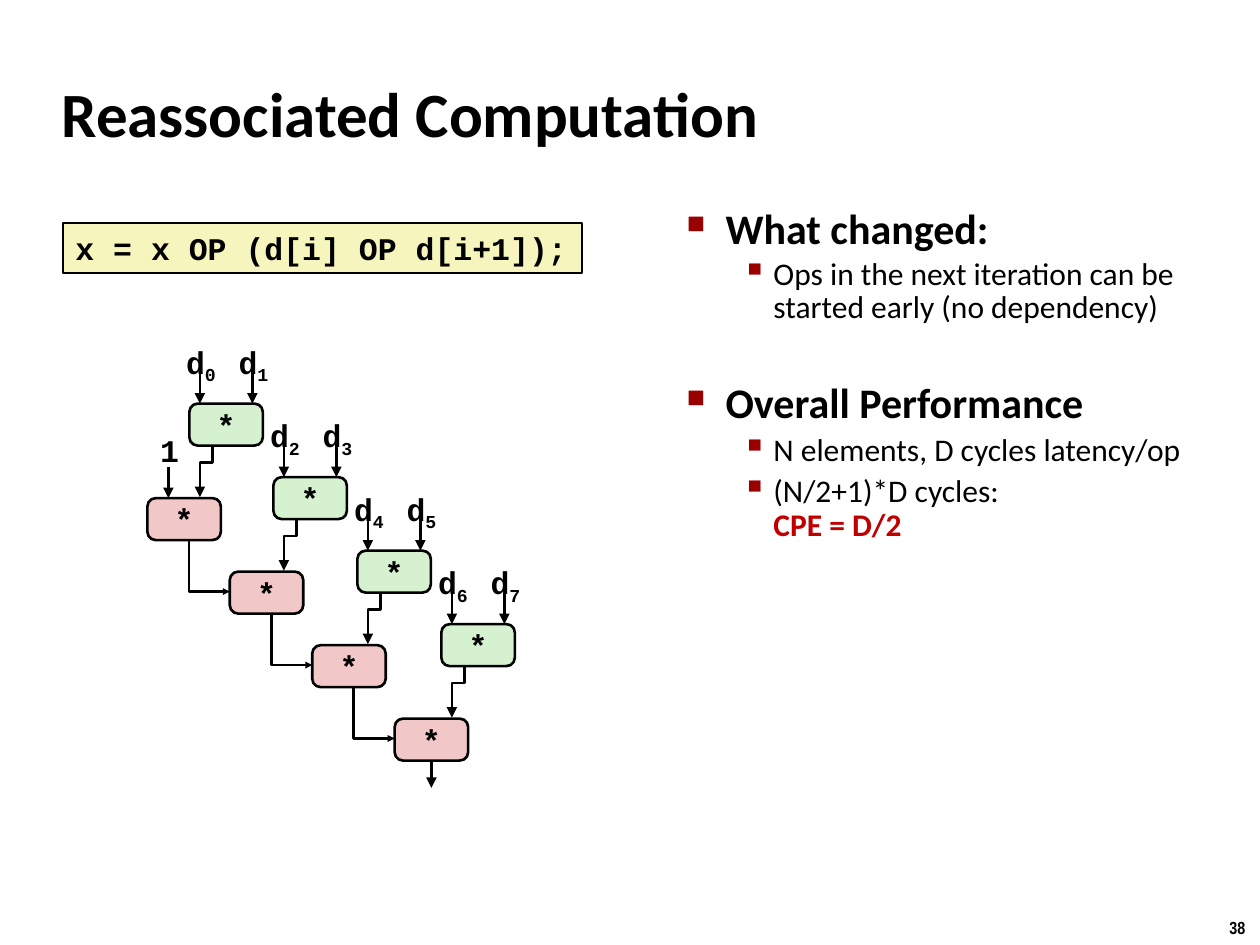
from lxml.etree import SubElement
from pptx import Presentation
from pptx.dml.color import RGBColor
from pptx.enum.shapes import MSO_CONNECTOR, MSO_SHAPE
from pptx.enum.text import MSO_ANCHOR, PP_ALIGN
from pptx.oxml.ns import qn
from pptx.util import Inches, Pt

COLORS = {
    "ink": "000000", "bullet": "990000", "accent": "C00000",
    "product": "D5F1CF", "total": "F1C7C7", "code": "F6F5BD",
}
CODE = {"name": "Courier New", "size": Pt(18), "bold": True}
TITLE = {"name": "Calibri", "size": Pt(36), "bold": True}
HEADING = {"name": "Calibri", "size": Pt(24), "bold": True}
DETAIL = {"name": "Calibri", "size": Pt(18), "bold": False}
STRONG = {**DETAIL, "bold": True}
NUMBER = {"name": "Arial Narrow", "size": Pt(10), "bold": True}
INSETS = ("margin_left", "margin_right", "margin_top", "margin_bottom")
CELL = 1 / 12
STAGES = 4


def apply(target, values):
    """Set every attribute in a dict of format values."""
    for name, value in values.items():
        setattr(target, name, value)


def write(para, text, font, color="ink"):
    """Add one formatted span to a paragraph."""
    span = para.add_run()
    span.text = text
    apply(span.font, font)
    span.font.color.rgb = RGBColor.from_string(COLORS[color])
    return span


def add_text(page, box, text, font, frame=None):
    """Add a one-paragraph text box and return its paragraph."""
    shape = page.shapes.add_textbox(*map(Inches, box))
    apply(shape.text_frame, {"word_wrap": False, **(frame or {})})
    para = shape.text_frame.paragraphs[0]
    write(para, text, font)
    return para


def add_block(page, kind, box, text, fill, weight):
    """Add a filled, outlined shape holding a line of code."""
    shape = page.shapes.add_shape(kind, *map(Inches, box))
    shape.shadow.inherit = False
    shape.fill.solid()
    shape.fill.fore_color.rgb = RGBColor.from_string(COLORS[fill])
    set_line(shape, weight)
    apply(shape.text_frame, {"word_wrap": False, "vertical_anchor": MSO_ANCHOR.MIDDLE})
    write(shape.text_frame.paragraphs[0], text, CODE)
    return shape


def set_line(shape, weight):
    """Give a shape or connector a black line."""
    shape.line.color.rgb = RGBColor.from_string(COLORS["ink"])
    shape.line.width = Pt(weight)


def add_arrow(page, points, head="med"):
    """Add a straight or bent arrow through points in inches."""
    places = [(Inches(x), Inches(y)) for x, y in points]
    if len(places) == 2:
        arrow = page.shapes.add_connector(MSO_CONNECTOR.STRAIGHT, *places[0], *places[1])
    else:
        outline = page.shapes.build_freeform(*places[0], scale=1.0)
        outline.add_line_segments(places[1:], close=False)
        arrow = outline.convert_to_shape()
        arrow.fill.background()
    set_line(arrow, 1.5)
    properties = arrow.element.spPr
    SubElement(properties.find(qn("a:ln")), qn("a:tailEnd"), type="triangle", w=head, len=head)
    SubElement(properties, qn("a:effectLst"))


def draw_diagram(page, box):
    """Draw the staircase of products feeding a running total."""
    left, top = box[:2]

    def at(column, row):
        """Turn a grid position into inches."""
        return left + column * CELL, top + row * CELL

    def node(column, row, fill):
        """Draw one multiplication node."""
        place = (*at(column, row), 7 * CELL, 4 * CELL)
        shape = add_block(page, MSO_SHAPE.ROUNDED_RECTANGLE, place, "*", fill, 1.5)
        shape.adjustments[0] = 0.2
        shape.text_frame.paragraphs[0].alignment = PP_ALIGN.CENTER

    def arrow(*points, head="med"):
        """Draw an arrow through grid positions."""
        add_arrow(page, [at(*point) for point in points], head)

    def label(column, row, width, text, index=""):
        """Draw an operand name with an optional subscript."""
        frame = dict.fromkeys(INSETS, Inches(0.05))
        para = add_text(page, (*at(column, row), width * CELL, 4.8 * CELL), text, CODE, frame)
        para.alignment = PP_ALIGN.CENTER
        if index:
            span = write(para, index, CODE)
            span.font._element.set("baseline", "-25000")

    last_x, last_y = 7.85 * (STAGES - 1), 15.4 + 7 * (STAGES - 1)
    arrow((last_x + 3.5, last_y + 3.6), (last_x + 3.5, last_y + 6.6))
    arrow((2, 12.4), (2, 15.4))
    label(0.6, 8.4, 3, "1")
    for stage in range(STAGES):
        x, y = 7.85 * stage, 15.4 + 7 * stage
        node(x, y, "total")
        if stage < STAGES - 1:
            arrow((x + 3.95, y + 4), (x + 3.95, y + 8.9), (x + 7.85, y + 8.9), head="sm")
    for stage in range(STAGES):
        x, y = 4 + 8 * stage, 6.4 + 7 * stage
        node(x, y, "product")
        for side in range(2):
            label(x - 1 + 5 * side, y - 6.4, 4.2, "d", str(2 * stage + side))
            arrow((x + 1 + 5 * side, y - 3), (x + 1 + 5 * side, y))
        arrow((x + 2.2, y + 4), (x + 2.2, y + 5.6), (x + 1, y + 5.6), (x + 1, y + 8.9))


def add_bullet(para, indent, hanging, char, size):
    """Give a paragraph a hanging coloured bullet."""
    properties = para._p.get_or_add_pPr()
    properties.set("marL", str(Inches(indent)))
    properties.set("indent", str(-Inches(hanging)))
    color = SubElement(properties, qn("a:buClr"))
    SubElement(color, qn("a:srgbClr"), val=COLORS["bullet"])
    SubElement(properties, qn("a:buSzPct"), val=str(size * 1000))
    SubElement(properties, qn("a:buChar"), char=char)


def draw_points(page, box):
    """Write the two-level list of findings."""
    rows = [
        (0, "What changed:", 0.85, 5),
        (1, "Ops in the next iteration can be started early (no dependency)", 0.85, 4),
        (0, "Overall Performance", 0.85, 34),
        (1, "N elements, D cycles latency/op", 0.9, 4),
        (1, "(N/2+1)*D cycles:", 0.9, 4),
    ]
    bullets = [(0.31, 0.31, "■", 60), (0.69, 0.25, "▪", 110)]
    frame = page.shapes.add_textbox(*map(Inches, box)).text_frame
    frame.word_wrap = True
    for number, (level, text, spacing, before) in enumerate(rows):
        para = frame.add_paragraph() if number else frame.paragraphs[0]
        apply(para, {"level": level, "line_spacing": spacing, "space_before": Pt(before)})
        add_bullet(para, *bullets[level])
        write(para, text, DETAIL if level else HEADING)
    para.add_line_break()
    write(para, "CPE = D/2", STRONG, "accent")


def draw_code(page, box):
    """Draw the highlighted statement."""
    shape = add_block(page, MSO_SHAPE.RECTANGLE, box, "x = x OP (d[i] OP d[i+1]);", "code", 1)
    shape.text_frame.paragraphs[0].alignment = PP_ALIGN.LEFT


def main():
    """Build the slide and save the deck."""
    deck = Presentation()
    apply(deck, {"slide_width": Inches(10), "slide_height": Inches(7.5)})
    page = deck.slides.add_slide(deck.slide_layouts[6])
    add_text(page, (9.66, 7.23, 0.34, 0.27), "38", NUMBER)
    add_text(page, (0.39, 0.48, 8.3, 0.83), "Reassociated Computation", TITLE,
             {"word_wrap": True, "vertical_anchor": MSO_ANCHOR.MIDDLE})
    draw_points(page, (5.35, 1.62, 4.32, 5.71))
    draw_diagram(page, (1.17, 2.67, 3.01, 3.58))
    draw_code(page, (0.5, 1.77, 4.12, 0.4))
    deck.save("out.pptx")


if __name__ == "__main__":
    main()
